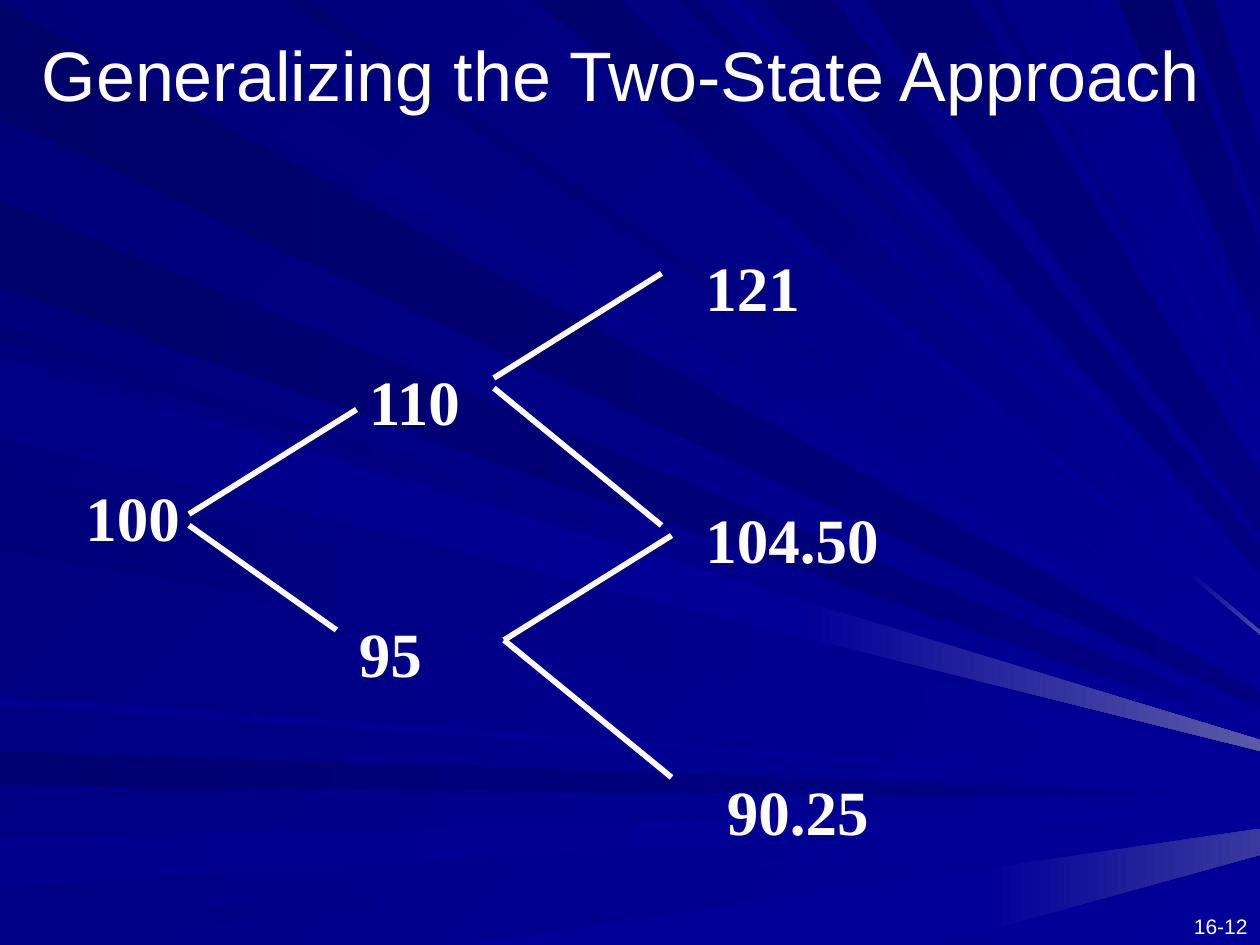
import pptx
import pptx.dml.color
import pptx.enum.shapes
import pptx.enum.text
import pptx.oxml.ns
import pptx.util
from lxml import etree

COLORS = {"text": "FFFFFF", "bg_start": "000078", "bg_end": "000099"}
ALIGN = pptx.enum.text.PP_ALIGN
ANCHOR = pptx.enum.text.MSO_ANCHOR
WIDTH, HEIGHT = 10, 7.5

# Background rays run from a slide edge towards one point beyond the right side:
# edge, both starts along it, colours, then where a brighter tail begins
APEX = (11.57, 6.35)
ANGLES = {"left": 0, "top": 45, "bottom": 0}
RAYS = [
    ("left", 0.02, 0.93, "000069 000080"),
    ("top", 0.26, 1.01, "00007B 000099"),
    ("left", 5.96, 6.23, "000071 000080 000099", 7),
    ("left", 6.65, 7.04, "00008C 000099"),
    ("left", 7.35, 7.5, "000085 000099"),
    ("bottom", 3.64, 7.42, "000099 000099 39399E", 7.8),
    ("left", 2.58, 2.7, "000076 000099"),
    ("left", 1.59, 2.28, "00006B 000080 000099", 8.73),
    ("top", 3.98, 4.16, "000083 000099 4A4AA1", 9.45),
    ("top", 4.26, 4.92, "00006D 000099"),
    ("top", 5.4, 5.52, "000073 000099"),
    ("top", 6.06, 6.61, "000073 000080"),
    ("top", 8.87, 9.3, "00006B 000080"),
    ("top", 9.39, 9.64, "00006D 000080"),
    ("left", 2.78, 3.42, "00007E 000099"),
    ("left", 3.74, 4.37, "00007B 000099"),
    ("left", 5.52, 5.6, "00008E 000099"),
    ("top", 2.25, 2.47, "000070 000099"),
    ("top", 5.77, 5.88, "00008E 000099"),
    ("top", 6.86, 7.7, "000073 000080"),
    ("top", 7.85, 7.92, "000078 000099"),
    ("top", 8.15, 8.24, "000085 000099"),
    ("top", 8.65, 8.72, "00008A 000099"),
    ("left", 2.83, 3.47, "000085 000099 5A5AA6", 6.35),
]

# Price tree: text with left, top and width; branches as start and end points
PRICES = [
    ("100", 0.58, 3.75, 1), ("110", 2.83, 2.83, 1), ("95", 2.75, 4.83, 1),
    ("121", 5.5, 1.92, 1), ("104.50", 5.5, 3.92, 1.75), ("90.25", 5.67, 6.08, 1.5),
]
BRANCHES = [
    ((1.5, 4.08), (2.83, 3.25)), ((1.5, 4.17), (2.67, 5)),
    ((3.92, 3), (5.25, 2.17)), ((3.92, 3.08), (5.25, 4.17)),
    ((4, 5.08), (5.33, 4.25)), ((4, 5.08), (5.33, 6.17)),
]


def cm(*inches):
    """Turn inches into a list of lengths."""
    return [pptx.util.Cm(n * 2.54) for n in inches]


def rgb(value):
    return pptx.dml.color.RGBColor.from_string(value)


def edge_point(edge, start):
    """Give the point at a distance along a slide edge."""
    return {"left": (0, start), "top": (start, 0), "bottom": (start, HEIGHT)}[edge]


def toward_apex(point, x):
    """Follow the ray from a point up to the given x."""
    share = (x - point[0]) / (APEX[0] - point[0])
    return x, point[1] + share * (APEX[1] - point[1])


def write(tf, text, size=36, font="Times New Roman", bold=False,
          align=ALIGN.LEFT, anchor=ANCHOR.TOP):
    """Put one formatted paragraph into a text frame."""
    tf.word_wrap = True
    tf.vertical_anchor = anchor
    p = tf.paragraphs[0]
    p.alignment = align
    r = p.add_run()
    r.text = text
    r.font.size = pptx.util.Pt(size)
    r.font.name = font
    r.font.bold = bold
    r.font.color.rgb = rgb(COLORS["text"])


def gradient(fill, first, last, angle):
    """Fill with a linear gradient; the angle runs clockwise."""
    fill.gradient()
    fill.gradient_angle = (360 - angle) % 360
    for stop, color in zip(fill.gradient_stops, (first, last)):
        stop.color.rgb = rgb(color)


class Deck:
    def __init__(self):
        self.prs = pptx.Presentation()
        self.prs.slide_width, self.prs.slide_height = cm(WIDTH, HEIGHT)
        self.s = self.prs.slides.add_slide(self.prs.slide_layouts[5])
        self.line_width = pptx.util.Pt(3.25)

    def background(self):
        gradient(self.s.background.fill, COLORS["bg_start"], COLORS["bg_end"], 45)
        group = self.s.shapes.add_group_shape()
        for edge, start, end, colors, *split in RAYS:
            near = [edge_point(edge, start), edge_point(edge, end)]
            colors = colors.split()
            for x, first, last in zip(split + [WIDTH], colors, colors[1:]):
                far = [toward_apex(point, x) for point in near]
                self.ray(group, near + far[::-1], first, last, ANGLES[edge])
                near = far
        # Send the rays behind the title
        self.s.shapes._spTree.insert(2, group._element)

    def ray(self, group, corners, first, last, angle):
        points = [cm(*corner) for corner in corners]
        builder = group.shapes.build_freeform(*points[0])
        builder.add_line_segments(points[1:], close=True)
        sp = builder.convert_to_shape()
        sp.shadow.inherit = False
        sp.line.fill.background()
        gradient(sp.fill, first, last, angle)

    def title(self, text):
        sp = self.s.shapes.title
        sp.left, sp.top, sp.width, sp.height = cm(0, 0.02, WIDTH, 1.12)
        write(sp.text_frame, text, size=40, font="Arial",
              align=ALIGN.CENTER, anchor=ANCHOR.MIDDLE)

    def text(self, text, left, top, width, height, **style):
        sp = self.s.shapes.add_textbox(*cm(left, top, width, height))
        write(sp.text_frame, text, **style)

    def line(self, start, end):
        sp = self.s.shapes.add_connector(
            pptx.enum.shapes.MSO_CONNECTOR.STRAIGHT, *cm(*start, *end))
        sp.line.color.rgb = rgb(COLORS["text"])
        sp.line.width = self.line_width
        etree.SubElement(sp._element.spPr, pptx.oxml.ns.qn("a:effectLst"))


def main():
    deck = Deck()
    deck.background()
    # The closing space is part of the centred line
    deck.title("Generalizing the Two-State Approach ")

    # Price tree
    for price, left, top, width in PRICES:
        deck.text(price, left, top, width, 0.7, bold=True)
    for start, end in BRANCHES:
        deck.line(start, end)

    # Page number
    deck.text("16-12", 8.92, 7.2, 1.08, 0.3, size=12, font="Arial", align=ALIGN.RIGHT)
    deck.prs.save("out.pptx")


if __name__ == "__main__":
    main()
